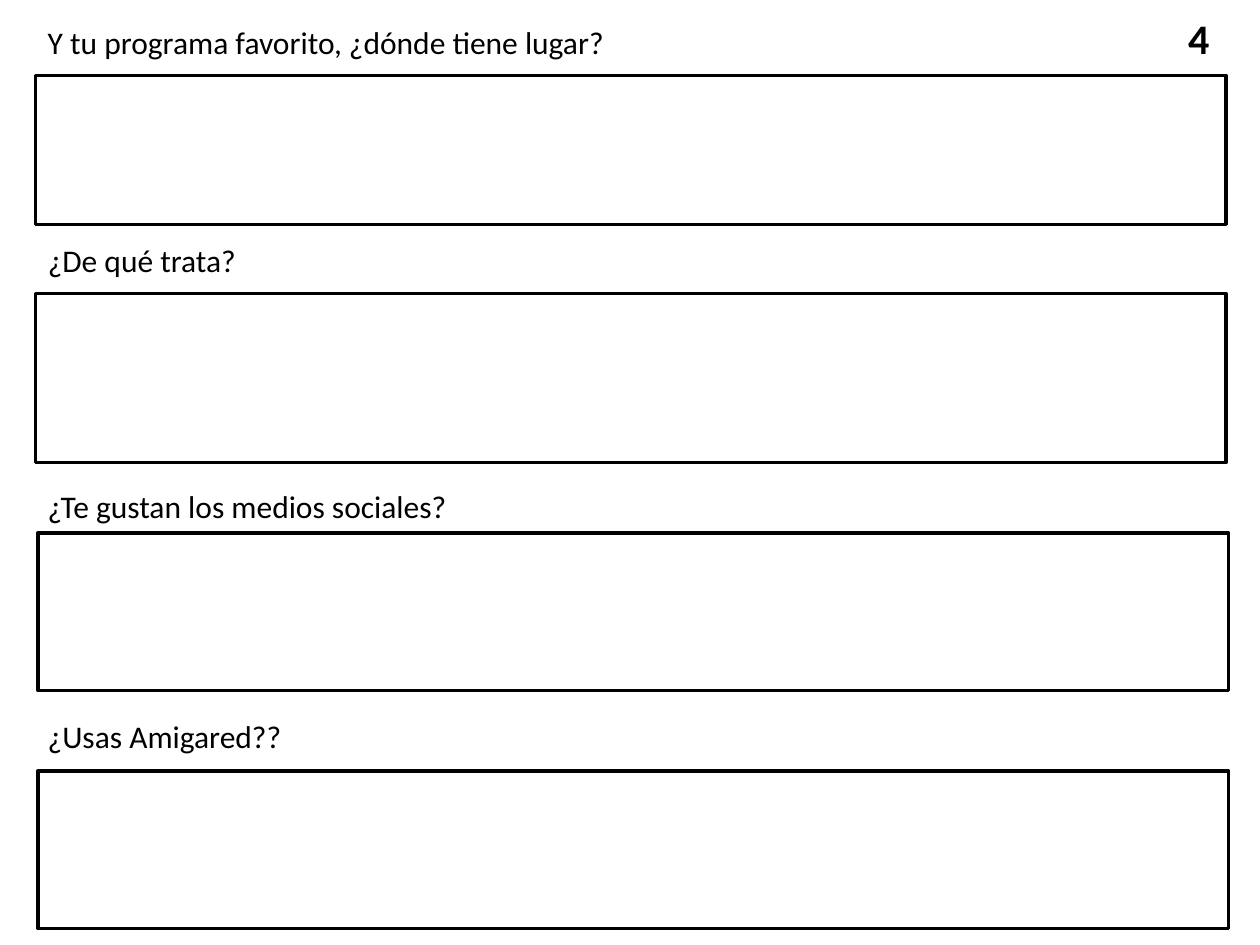
from dataclasses import dataclass

import pptx
import pptx.dml.color
import pptx.enum.shapes
import pptx.enum.text
import pptx.presentation
import pptx.slide
import pptx.util


@dataclass(frozen=True)
class Theme:
    ink: pptx.dml.color.RGBColor = pptx.dml.color.RGBColor(0, 0, 0)
    font: str = "Calibri"
    question_size: float = 18
    number_size: float = 24
    border: float = 2


@dataclass(frozen=True)
class Question:
    """A question and its answer box; lengths in points."""
    text: str
    text_top: float
    text_width: float
    box_left: float
    box_top: float
    box_height: float


THEME = Theme()
QUESTION_LEFT = 20.2
QUESTION_HEIGHT = 29
BOX_WIDTH = 680.4

QUESTIONS = [
    Question("Y tu programa favorito, ¿dónde tiene lugar?", 9.4, 336.2, 20.2, 43.2, 85),
    Question("¿De qué trata?", 133.9, 123.1, 20.2, 167.8, 96.5),
    Question("¿Te gustan los medios sociales?", 275, 244.8, 21.6, 304.6, 90),
    Question("¿Usas Amigared??", 406.1, 149, 21.6, 440.6, 90),
]


def add_text(slide: pptx.slide.Slide, text: str, *, left: float, top: float,
             width: float, height: float, size: float,
             bold: bool = False, wrap: bool = False) -> None:
    shape = slide.shapes.add_textbox(*map(pptx.util.Pt, (left, top, width, height)))
    frame = shape.text_frame
    frame.word_wrap = wrap
    frame.auto_size = pptx.enum.text.MSO_AUTO_SIZE.SHAPE_TO_FIT_TEXT
    run = frame.paragraphs[0].add_run()
    run.text = text
    run.font.name = THEME.font
    run.font.size = pptx.util.Pt(size)
    run.font.bold = bold
    run.font.color.rgb = THEME.ink


def add_answer_box(slide: pptx.slide.Slide, question: Question) -> None:
    bounds = (question.box_left, question.box_top, BOX_WIDTH, question.box_height)
    shape = slide.shapes.add_shape(
        pptx.enum.shapes.MSO_SHAPE.RECTANGLE, *map(pptx.util.Pt, bounds))
    shape.shadow.inherit = False
    shape.fill.background()
    shape.line.color.rgb = THEME.ink
    shape.line.width = pptx.util.Pt(THEME.border)


def build_worksheet() -> pptx.presentation.Presentation:
    presentation = pptx.Presentation()
    presentation.slide_width = pptx.util.Pt(720)
    presentation.slide_height = pptx.util.Pt(540)
    slide = presentation.slides.add_slide(presentation.slide_layouts[6])
    for question in QUESTIONS:
        add_answer_box(slide, question)
        add_text(slide, question.text, left=QUESTION_LEFT, top=question.text_top,
                 width=question.text_width, height=QUESTION_HEIGHT,
                 size=THEME.question_size)
    add_text(slide, "4", left=671.8, top=3.6, width=48.2, height=36,
             size=THEME.number_size, bold=True, wrap=True)
    return presentation


if __name__ == "__main__":
    build_worksheet().save("out.pptx")
